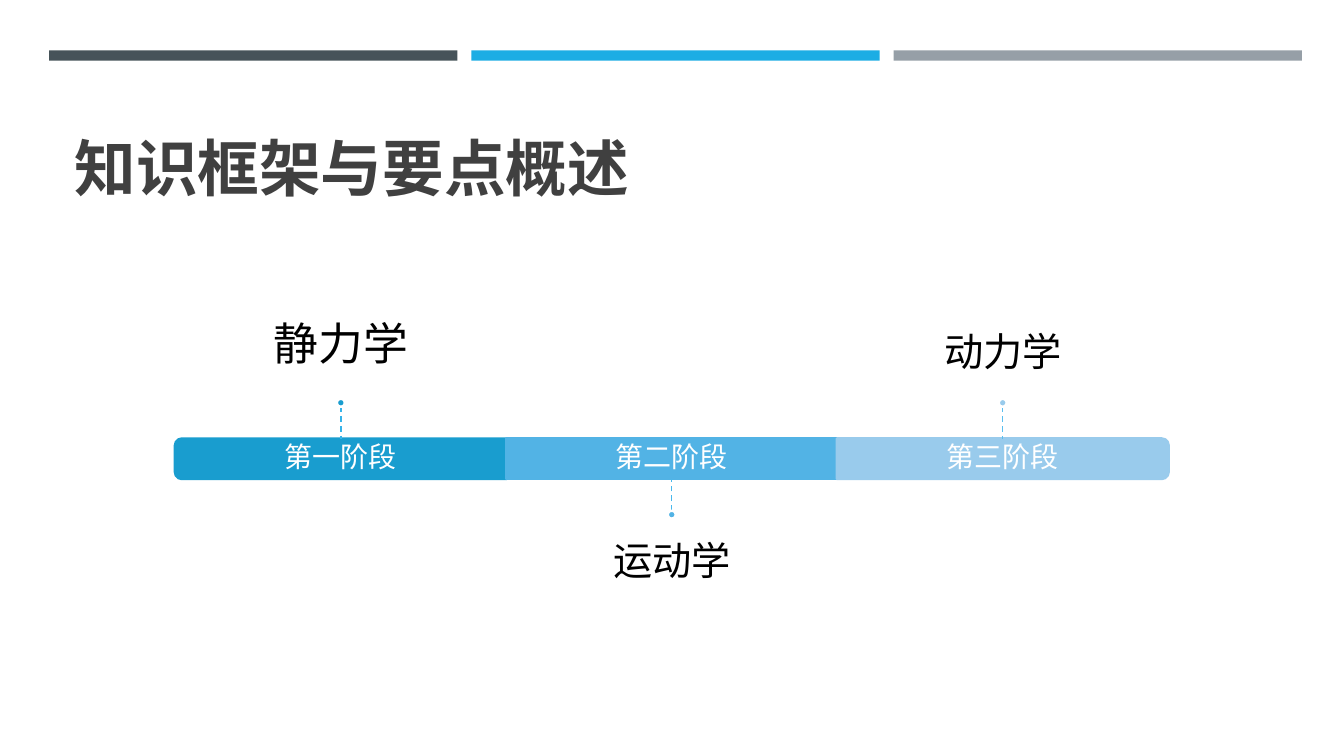
from dataclasses import dataclass

from lxml import etree
from pptx import Presentation
from pptx.dml.color import RGBColor
from pptx.enum.dml import MSO_LINE
from pptx.enum.shapes import MSO_CONNECTOR, MSO_SHAPE
from pptx.enum.text import MSO_ANCHOR, PP_ALIGN
from pptx.oxml.ns import qn
from pptx.util import Cm, Pt

RECT, OVAL = MSO_SHAPE.RECTANGLE, MSO_SHAPE.OVAL
ROUND = MSO_SHAPE.ROUND_2_SAME_RECTANGLE
STRAIGHT, DASH = MSO_CONNECTOR.STRAIGHT, MSO_LINE.DASH
TOP, MIDDLE, BOTTOM = MSO_ANCHOR.TOP, MSO_ANCHOR.MIDDLE, MSO_ANCHOR.BOTTOM
LEFT, CENTER = PP_ALIGN.LEFT, PP_ALIGN.CENTER


@dataclass(frozen=True)
class Theme:
    font: str = "Noto Sans CJK SC"
    title: str = "404040"
    topic: str = "000000"
    white: str = "FFFFFF"
    bars: tuple = ("465359", "1CADE4", "969FA7")
    fills: tuple = ("199DCF", "52B3E5", "99CBEC")
    stems: tuple = ("36B3E9", "48B8EC", "5ABEEF")
    head: int = 44
    stage: int = 20
    big: int = 32
    mid: int = 28


THEME = Theme()

# Stage, topic, topic size, topic above the band, gap to the topic
STAGES = (
    ("第一阶段", "静力学", THEME.big, True, 0.69),
    ("第二阶段", "运动学", THEME.mid, False, 0.58),
    ("第三阶段", "动力学", THEME.mid, True, 0.58),
)
WIDTH, STEP, FIRST = 8.36, 8.34, 8.59
BAND, HIGH = 11.05, 1.02
STEM, DOT = 0.8, 0.2


def rgb(code):
    return RGBColor.from_string(code)


def add_text(slide, text, box, size, color, bold=False, align=CENTER,
             anchor=MIDDLE, inset=(0, 0, 0, 0), space=0.9):
    """Box is left, top, width, height; inset is left, top, right, bottom."""
    frame = slide.shapes.add_textbox(*map(Cm, box)).text_frame
    frame.word_wrap = True
    frame.vertical_anchor = anchor
    (frame.margin_left, frame.margin_top,
     frame.margin_right, frame.margin_bottom) = map(Cm, inset)
    para = frame.paragraphs[0]
    para.alignment = align
    para.line_spacing = space
    run = para.add_run()
    run.text = text
    font = run.font
    font.name, font.size, font.bold = THEME.font, Pt(size), bold
    font.color.rgb = rgb(color)
    east = etree.SubElement(font._element, qn("a:ea"))
    east.set("typeface", THEME.font)


def add_block(slide, kind, box, fill, line=None, turn=0):
    shape = slide.shapes.add_shape(kind, *map(Cm, box))
    shape.shadow.inherit = False
    shape.rotation = turn
    shape.fill.solid()
    shape.fill.fore_color.rgb = rgb(fill)
    if line:
        shape.line.color.rgb = rgb(line)
        shape.line.width = Pt(1.75)
    else:
        shape.line.fill.background()


def add_stem(slide, mid, start, end, color):
    stem = slide.shapes.add_connector(
        STRAIGHT, Cm(mid), Cm(start), Cm(mid), Cm(end))
    stem.line.color.rgb = rgb(color)
    stem.line.width = Pt(1)
    stem.line.dash_style = DASH
    etree.SubElement(stem._element.spPr, qn("a:effectLst"))


def add_band(slide, mid, turn, fill):
    """Draw one part of the band; a turned part has a rounded outer end."""
    kind, wide, high = (ROUND, HIGH, WIDTH) if turn else (RECT, WIDTH, HIGH)
    box = (mid - wide / 2, BAND + (HIGH - high) / 2, wide, high)
    add_block(slide, kind, box, fill, fill, turn)


def add_topic(slide, mid, text, size, above, gap):
    wide, high = 13.92, 3.53
    top = 6.5 if above else 13.06
    inset = (0, 0, 0, gap) if above else (0, gap, 0, 0)
    add_text(slide, text, (mid - wide / 2, top, wide, high), size,
             THEME.topic, anchor=BOTTOM if above else TOP, inset=inset)


def add_stage(slide, index, turn):
    name, topic, size, above, gap = STAGES[index]
    fill = THEME.fills[index]
    mid = FIRST + STEP * index
    add_band(slide, mid, turn, fill)
    add_text(slide, name, (mid - WIDTH / 2, BAND, WIDTH, HIGH),
             THEME.stage, THEME.white, inset=(0.43,) * 4)
    add_topic(slide, mid, topic, size, above, gap)
    edge = BAND if above else BAND + HIGH
    tip = edge - STEM if above else edge + STEM
    add_stem(slide, mid, tip, edge, THEME.stems[index])
    top = tip - DOT if above else tip
    add_block(slide, OVAL, (mid - DOT / 2, top, DOT, DOT), fill, THEME.white)


def main():
    deck = Presentation()
    deck.slide_width, deck.slide_height = Cm(33.87), Cm(19.05)
    slide = deck.slides.add_slide(deck.slide_layouts[6])
    for index, color in enumerate(THEME.bars):
        add_block(slide, RECT, (1.24 + 10.64 * index, 1.27, 10.29, 0.26),
                  color)
    add_text(slide, "知识框架与要点概述", (1.63, 1.96, 30.63, 3.3),
             THEME.head, THEME.title, bold=True, align=LEFT, anchor=BOTTOM,
             inset=(0.25, 0.13, 0.25, 0.13), space=1)
    for index, turn in enumerate((270, 0, 90)):
        add_stage(slide, index, turn)
    deck.save("out.pptx")


if __name__ == "__main__":
    main()
